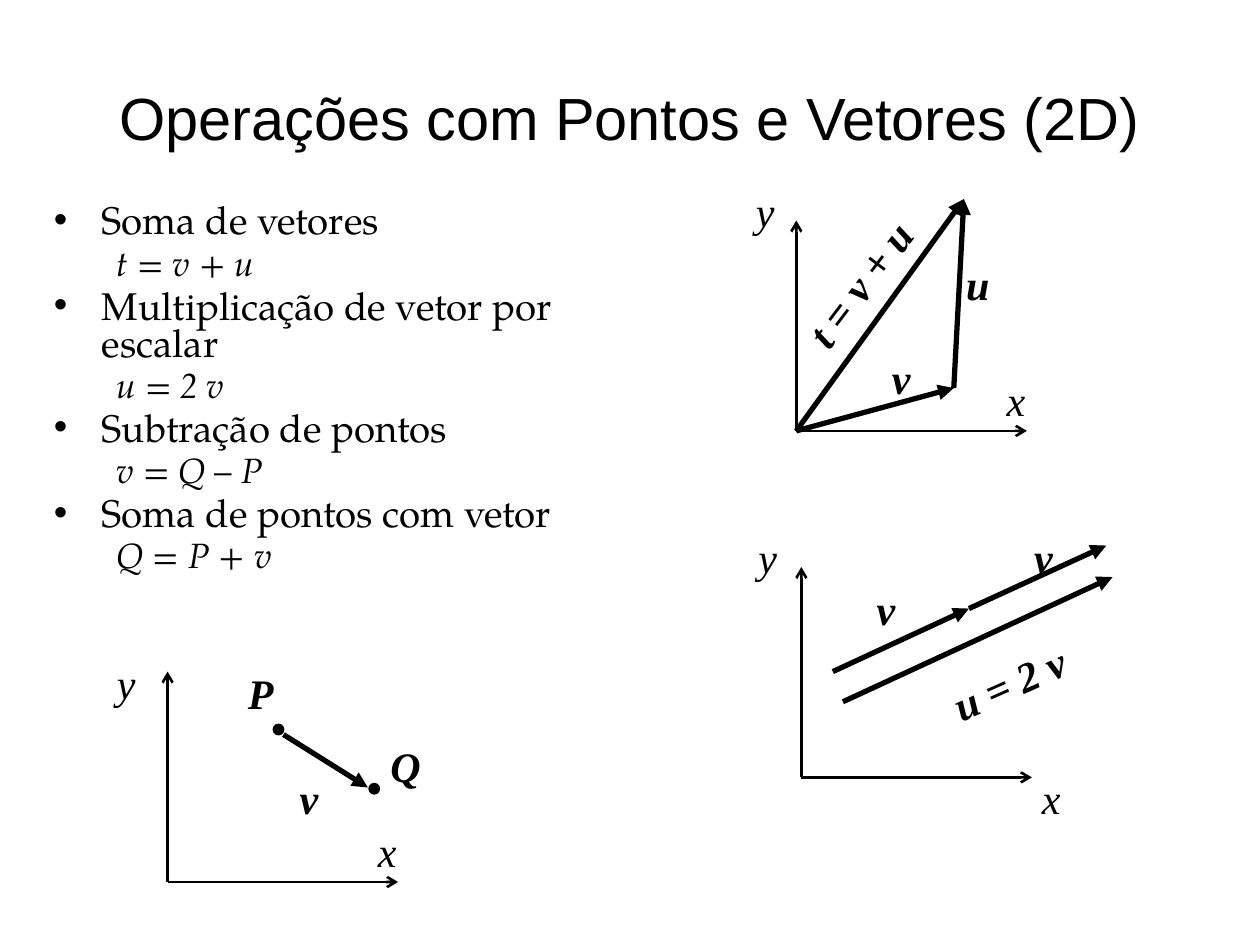
from pptx import Presentation
from pptx.dml.color import RGBColor
from pptx.enum.shapes import MSO_CONNECTOR, MSO_SHAPE
from pptx.enum.text import MSO_ANCHOR, MSO_AUTO_SIZE, PP_ALIGN
from pptx.oxml.ns import qn
from pptx.util import Inches, Pt
from lxml.etree import SubElement


def ink(code):
    """Turn a hex string into a colour."""
    return RGBColor.from_string(code)


class Board:
    """Holds the style and the slide, and draws each kind of element."""

    color = "000000"
    head = "Arial"
    serif = "TeX Gyre Pagella"
    math = "Times New Roman"

    def __init__(self, slide):
        """Keep the slide to draw on."""
        self.slide = slide

    def frame(self, *box):
        """Add a text box and return its shape."""
        shape = self.slide.shapes.add_textbox(*map(Inches, box))
        shape.text_frame.word_wrap = True
        return shape

    def style(self, para, face, size):
        """Set the font of a paragraph and return it."""
        font = para.font
        font.name, font.size = face, Pt(size)
        font.color.rgb = ink(self.color)
        return font

    def title(self, text, *box):
        """Add the centred heading."""
        frame = self.frame(*box).text_frame
        frame.vertical_anchor = MSO_ANCHOR.MIDDLE
        para = frame.paragraphs[0]
        para.text, para.alignment = text, PP_ALIGN.CENTER
        self.style(para, self.head, 34)

    def item(self, para, size, left, hang, bullet=None):
        """Format one line of the list."""
        self.style(para, self.serif, size)
        para.line_spacing, para.space_before = 0.8, Pt(size * 0.2)
        props = para._p.get_or_add_pPr()
        props.set("marL", str(Inches(left)))
        props.set("indent", str(-Inches(hang)))
        if bullet:
            SubElement(props, qn("a:buFont"), typeface=self.head)
            SubElement(props, qn("a:buChar"), char=bullet)
        else:
            SubElement(props, qn("a:buNone"))

    def topics(self, rows, *box):
        """Add bullets, each with a formula of italic and upright parts."""
        frame = self.frame(*box).text_frame
        for pos, (text, parts) in enumerate(rows):
            para = frame.add_paragraph() if pos else frame.paragraphs[0]
            para.text = text
            self.item(para, 22, 0.38, 0.38, "•")
            para = frame.add_paragraph()
            para.level = 1
            for place, part in enumerate(parts):
                run = para.add_run()
                run.text, run.font.italic = part, place % 2 == 0
            self.item(para, 20, 0.81, 0.31)

    def label(self, text, x, y, wide=0.35, bold=True, turn=0):
        """Add an italic label, turned if need be."""
        shape = self.frame(x, y, wide, 0.5)
        shape.rotation = turn
        frame = shape.text_frame
        frame.word_wrap = False
        frame.auto_size = MSO_AUTO_SIZE.SHAPE_TO_FIT_TEXT
        para = frame.paragraphs[0]
        para.text = text
        font = self.style(para, self.math, 24)
        font.bold, font.italic = bold, True

    def arrow(self, start, end, width=3, tip="triangle"):
        """Add a straight arrow between two points."""
        ends = map(Inches, (*start, *end))
        link = self.slide.shapes.add_connector(MSO_CONNECTOR.STRAIGHT, *ends)
        link.line.width = Pt(width)
        link.line.color.rgb = ink(self.color)
        props = link._element.spPr
        SubElement(props.find(qn("a:ln")), qn("a:tailEnd"), type=tip)
        SubElement(props, qn("a:effectLst"))

    def axes(self, x, y, xname, yname):
        """Add a pair of axes from an origin, with their names."""
        for end in ((x + 1.83, y), (x, y - 1.67)):
            self.arrow((x, y), end, 1.5, "arrow")
        self.label("x", *xname, bold=False)
        self.label("y", *yname, bold=False)

    def dot(self, x, y):
        """Add a point."""
        box = map(Inches, (x, y, 0.08, 0.08))
        shape = self.slide.shapes.add_shape(MSO_SHAPE.OVAL, *box)
        shape.shadow.inherit = False
        shape.fill.solid()
        shape.fill.fore_color.rgb = ink(self.color)
        shape.line.color.rgb = ink(self.color)
        shape.line.width = Pt(1)


def main():
    """Build the slide."""
    deck = Presentation()
    deck.slide_width, deck.slide_height = Inches(10), Inches(7.5)
    board = Board(deck.slides.add_slide(deck.slide_layouts[6]))

    board.title("Operações com Pontos e Vetores (2D)", 0.5, 0.3, 9, 1.25)
    rows = [
        ("Soma de vetores", ("t ", "=", " v ", "+", " u")),
        ("Multiplicação de vetor por escalar", ("u ", "=", " 2 v")),
        ("Subtração de pontos", ("v", " = ", "Q", " – ", "P")),
        ("Soma de pontos com vetor", ("Q", " = ", "P", " + ", "v")),
    ]
    board.topics(rows, 0.33, 1.58, 4.75, 3.17)

    base, bend, peak = (6.32, 3.42), (7.57, 3.08), (7.65, 1.58)
    board.axes(*base, (7.89, 2.92), (5.9, 1.42))
    for start, end in ((base, bend), (bend, peak), (base, peak)):
        board.arrow(start, end)
    board.label("v", 6.98, 2.75)
    board.label("u", 7.57, 2, 0.39)
    board.label("t = v + u", 6.15, 2, 1.34, turn=307.1)

    joint = (7.69, 4.83)
    board.axes(6.36, 6.17, (8.17, 6.08), (5.92, 4.17))
    board.arrow((6.61, 5.33), joint)
    board.arrow(joint, (8.78, 4.33))
    board.arrow((6.69, 5.57), (8.83, 4.58))
    board.label("v", 6.86, 4.58)
    board.label("v", 8.11, 4.17)
    board.label("u = 2 v", 7.44, 5.17, 1.14, turn=336.1)

    board.axes(1.33, 7, (2.9, 6.5), (0.83, 5.17))
    board.dot(2.17, 5.75)
    board.dot(2.93, 6.22)
    board.arrow((2.25, 5.83), (2.92, 6.25))
    board.label("P", 1.87, 5.25, 0.4)
    board.label("v", 2.28, 6.08)
    board.label("Q", 3, 5.83, 0.44)

    deck.save("out.pptx")


if __name__ == "__main__":
    main()
